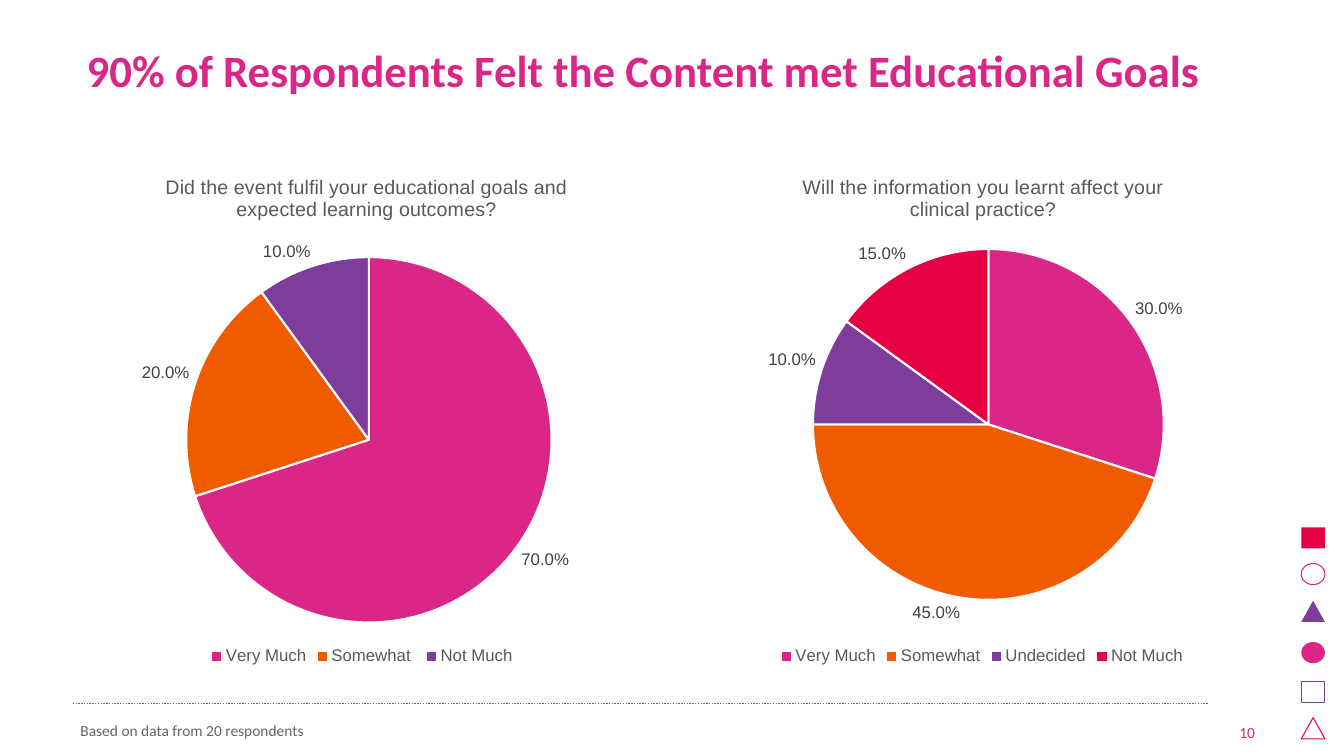
from dataclasses import dataclass

import lxml.etree
import pptx
import pptx.chart.data
import pptx.dml.color
import pptx.enum.chart
import pptx.enum.dml
import pptx.enum.shapes
import pptx.enum.text
import pptx.oxml.ns
import pptx.util
from pptx.util import Pt

PINK, ORANGE, PURPLE, RED = "DA2686", "F05B00", "7E3C9B", "E50043"
WHITE, GREY, CHART_GREY, LABEL_GREY = "FFFFFF", "646464", "595959", "404040"
Shape = pptx.enum.shapes.MSO_SHAPE
Align = pptx.enum.text.PP_ALIGN
Anchor = pptx.enum.text.MSO_ANCHOR

CHART_TOP, CHART_WIDTH, CHART_HEIGHT = 108, 408.2, 370
ICON_LEFT, ICON_WIDTH, ICON_HEIGHT = 929.5, 16.9, 15.1


@dataclass(frozen=True)
class Icon:
    kind: Shape
    top: float
    color: str
    filled: bool


@dataclass(frozen=True)
class Answer:
    name: str
    share: float
    color: str


@dataclass(frozen=True)
class Pie:
    left: float
    title_lines: tuple[str, ...]
    title_at: tuple[float, float]
    center: tuple[float, float]
    radius: float
    answers: tuple[Answer, ...]


ICONS = (
    Icon(Shape.RECTANGLE, 376.6, RED, True),
    Icon(Shape.OVAL, 402.5, PINK, False),
    Icon(Shape.ISOSCELES_TRIANGLE, 429.1, PURPLE, True),
    Icon(Shape.OVAL, 458.6, PINK, True),
    Icon(Shape.RECTANGLE, 486.7, PURPLE, False),
    Icon(Shape.ISOSCELES_TRIANGLE, 512.6, RED, False),
)

PIES = (
    Pie(54.7,
        ("Did the event fulfil your educational goals and", "expected learning outcomes?"),
        (0.15, 0.04), (263.5, 314.2), 130.5,
        (Answer("Very Much", 0.7, PINK), Answer("Somewhat ", 0.2, ORANGE),
         Answer("Not Much", 0.1, PURPLE))),
    Pie(497.5,
        ("Will the information you learnt affect your", "clinical practice?"),
        (0.18, 0.04), (706, 303.2), 125.3,
        (Answer("Very Much", 0.3, PINK), Answer("Somewhat", 0.45, ORANGE),
         Answer("Undecided", 0.1, PURPLE), Answer("Not Much", 0.15, RED))),
)


def rgb(color: str) -> pptx.dml.color.RGBColor:
    return pptx.dml.color.RGBColor.from_string(color)


def style_font(font, size: float, color: str, name: str, bold: bool = False) -> None:
    font.size, font.name, font.bold = Pt(size), name, bold
    font.color.rgb = rgb(color)


def add_run(paragraph, text: str, size: float, color: str, name: str, bold: bool = False) -> None:
    run = paragraph.add_run()
    run.text = text
    style_font(run.font, size, color, name, bold)


def place(shape, left: float, top: float, width: float, height: float) -> None:
    shape.left, shape.top, shape.width, shape.height = map(Pt, (left, top, width, height))


def add_title(slide, text: str) -> None:
    title = slide.shapes.title
    place(title, 54.7, 12.2, 850.3, 80.6)
    frame = title.text_frame
    frame.auto_size = pptx.enum.text.MSO_AUTO_SIZE.NONE
    frame.vertical_anchor = Anchor.MIDDLE
    paragraph = frame.paragraphs[0]
    paragraph.alignment, paragraph.line_spacing = Align.LEFT, 0.9
    add_run(paragraph, text, 32, PINK, "Calibri", True)


def add_note(slide, text: str, box: tuple[float, float, float, float], color: str, alignment) -> None:
    """Add a small bottom-anchored line of text."""
    frame = slide.shapes.add_textbox(*map(Pt, box)).text_frame
    frame.word_wrap, frame.vertical_anchor = True, Anchor.BOTTOM
    frame.paragraphs[0].alignment = alignment
    add_run(frame.paragraphs[0], text, 11, color, "Calibri")


def add_icon(slide, icon: Icon) -> None:
    shape = slide.shapes.add_shape(
        icon.kind, Pt(ICON_LEFT), Pt(icon.top), Pt(ICON_WIDTH), Pt(ICON_HEIGHT))
    shape.shadow.inherit = False
    if icon.filled:
        shape.fill.solid()
        shape.fill.fore_color.rgb = rgb(icon.color)
        shape.line.fill.background()
    else:
        shape.fill.background()
        shape.line.color.rgb = rgb(icon.color)
        shape.line.width = Pt(0.75)


def add_rule(slide) -> None:
    """Add the dotted line above the footer."""
    rule = slide.shapes.add_connector(
        pptx.enum.shapes.MSO_CONNECTOR.STRAIGHT, Pt(52), Pt(502.6), Pt(863.3), Pt(502.6))
    rule.line.color.rgb = rgb(GREY)
    rule.line.width = Pt(1)
    rule.line.dash_style = pptx.enum.dml.MSO_LINE.ROUND_DOT
    lxml.etree.SubElement(rule.element.spPr, pptx.oxml.ns.qn("a:effectLst"))


def set_layout(parent, index: int, **values: str | float) -> None:
    """Give a chart part a manual layout, as its child number index."""
    qn = pptx.oxml.ns.qn
    for old in parent.findall(qn("c:layout")):
        parent.remove(old)
    layout = lxml.etree.Element(qn("c:layout"))
    manual = lxml.etree.SubElement(layout, qn("c:manualLayout"))
    for tag, value in values.items():
        lxml.etree.SubElement(manual, qn(f"c:{tag}")).set("val", str(value))
    parent.insert(index, layout)


def add_pie(slide, pie: Pie) -> None:
    data = pptx.chart.data.CategoryChartData(number_format="0.0%")
    data.categories = [answer.name for answer in pie.answers]
    data.add_series("Series 1", [answer.share for answer in pie.answers])
    chart = slide.shapes.add_chart(
        pptx.enum.chart.XL_CHART_TYPE.PIE, Pt(pie.left), Pt(CHART_TOP),
        Pt(CHART_WIDTH), Pt(CHART_HEIGHT), data).chart
    style_font(chart.font, 10, "000000", "Arial")

    chart.has_title = True
    frame = chart.chart_title.text_frame
    for number, line in enumerate(pie.title_lines):
        paragraph = frame.add_paragraph() if number else frame.paragraphs[0]
        add_run(paragraph, line, 14, CHART_GREY, "Arial")
    title_x, title_y = pie.title_at
    set_layout(chart.chart_title.element, 1, xMode="edge", yMode="edge", x=title_x, y=title_y)

    chart.has_legend = True
    chart.legend.position = pptx.enum.chart.XL_LEGEND_POSITION.BOTTOM
    chart.legend.include_in_layout = False
    style_font(chart.legend.font, 12, CHART_GREY, "Arial")

    plot = chart.plots[0]
    plot.vary_by_categories = True
    plot.has_data_labels = True
    labels = plot.data_labels
    labels.show_value, labels.show_percentage = True, False
    labels.number_format, labels.number_format_is_linked = "0.0%", False
    labels.position = pptx.enum.chart.XL_LABEL_POSITION.OUTSIDE_END
    style_font(labels.font, 12, LABEL_GREY, "Arial")
    for number, answer in enumerate(pie.answers):
        point = plot.series[0].points[number]
        point.format.fill.solid()
        point.format.fill.fore_color.rgb = rgb(answer.color)
        point.format.line.color.rgb = rgb(WHITE)
        point.format.line.width = Pt(1.5)

    center_x, center_y = pie.center
    set_layout(
        chart.element.find(".//" + pptx.oxml.ns.qn("c:plotArea")), 0,
        layoutTarget="inner", xMode="edge", yMode="edge",
        x=(center_x - pie.radius - pie.left) / CHART_WIDTH,
        y=(center_y - pie.radius - CHART_TOP) / CHART_HEIGHT,
        w=2 * pie.radius / CHART_WIDTH, h=2 * pie.radius / CHART_HEIGHT)


def main() -> None:
    presentation = pptx.Presentation()
    presentation.slide_width, presentation.slide_height = Pt(960), Pt(540)
    slide = presentation.slides.add_slide(presentation.slide_layouts[5])
    for icon in ICONS:
        add_icon(slide, icon)
    add_rule(slide)
    add_title(slide, "90% of Respondents Felt the Content met Educational Goals")
    for pie in PIES:
        add_pie(slide, pie)
    add_note(slide, "Based on data from 20 respondents", (50.4, 499.7, 810.7, 32.4), GREY, Align.LEFT)
    add_note(slide, "10", (872.6, 504.7, 31, 28.8), PINK, Align.RIGHT)
    presentation.save("out.pptx")


if __name__ == "__main__":
    main()
